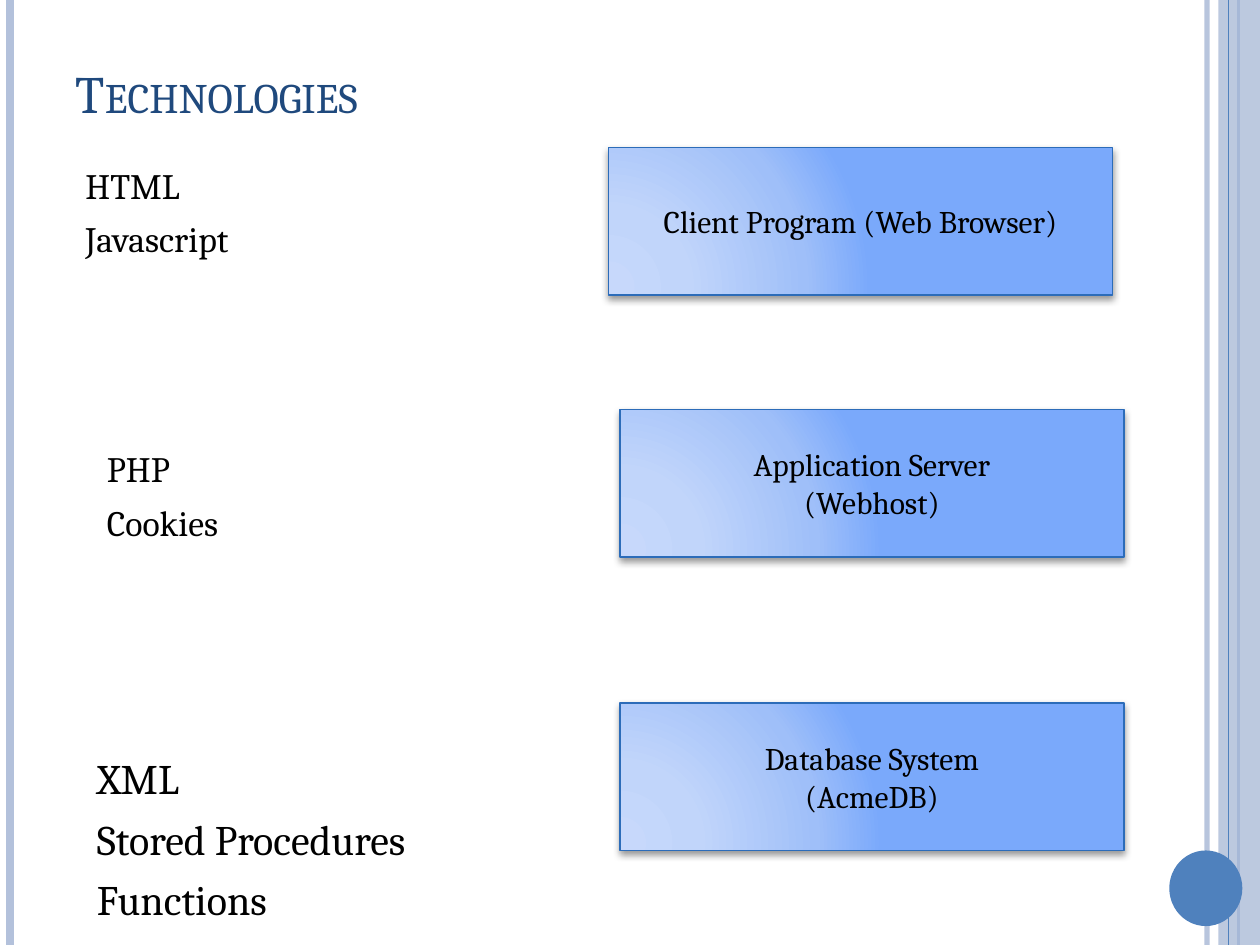
from lxml import etree
from pptx import Presentation
from pptx.dml.color import RGBColor
from pptx.enum.shapes import MSO_CONNECTOR, MSO_SHAPE
from pptx.enum.text import MSO_ANCHOR, PP_ALIGN
from pptx.oxml import parse_xml
from pptx.oxml.ns import nsdecls, qn
from pptx.util import Inches, Pt

STRAIGHT = MSO_CONNECTOR.STRAIGHT
RECTANGLE, OVAL = MSO_SHAPE.RECTANGLE, MSO_SHAPE.OVAL
MIDDLE, TOP = MSO_ANCHOR.MIDDLE, MSO_ANCHOR.TOP
LEFT, CENTER = PP_ALIGN.LEFT, PP_ALIGN.CENTER

FONT = "Cambria"
BLACK, NAVY, BLUE, PALE_BLUE = "000000", "1F497D", "4F81BD", "B3C1DB"
BOX_LINE = "2C6CB9"
GRADIENT_STOPS = [(0, "C7D8FB"), (30, "C1D5FA"), (75, "9FBFF9"), (100, "7AA9FB")]

TIERS = [
    ((4.83, 1.17, 4, 1.17), ["Client Program (Web Browser)"]),
    ((4.92, 3.25, 4, 1.17), ["Application Server", "(Webhost)"]),
    ((4.92, 5.58, 4, 1.17), ["Database System", "(AcmeDB)"]),
]
TECHNOLOGIES = [
    ((0.58, 1.25, 3.08, 0.75), 20.4, ["HTML", "Javascript"]),
    ((0.75, 3.5, 3.08, 0.75), 20.4, ["PHP", "Cookies"]),
    ((0.67, 5.92, 3.67, 1.42), 24, ["XML", "Stored Procedures", "Functions"]),
]


def color(value):
    return RGBColor.from_string(value)


def inches(box):
    return [Inches(length) for length in box]


def set_alpha(shape_properties, percent):
    rgb = next(shape_properties.iter(qn("a:srgbClr")))
    etree.SubElement(rgb, qn("a:alpha"), val=str(percent * 1000))


def write_lines(text_frame, lines, size, font_color=BLACK, align=LEFT, anchor=TOP, space=0):
    text_frame.word_wrap = True
    text_frame.vertical_anchor = anchor
    text_frame.text = "\n".join(lines)
    for paragraph in text_frame.paragraphs:
        paragraph.alignment = align
        paragraph.space_before = Pt(space)
        paragraph.font.name = FONT
        paragraph.font.size = Pt(size)
        paragraph.font.color.rgb = color(font_color)


def add_vertical_rule(slide, x, height, line_color, width):
    rule = slide.shapes.add_connector(STRAIGHT, *inches((x, 0, x, height)))
    rule.line.color.rgb = color(line_color)
    rule.line.width = Pt(width)
    etree.SubElement(rule._element.spPr, qn("a:effectLst"))
    return rule


def add_plain_shape(slide, kind, box, fill_color):
    shape = slide.shapes.add_shape(kind, *inches(box))
    shape.shadow.inherit = False
    shape.fill.solid()
    shape.fill.fore_color.rgb = color(fill_color)
    shape.line.fill.background()
    return shape


def add_frame(slide, width, height):
    inner_rule = add_vertical_rule(slide, width - 0.42, height, PALE_BLUE, 3)
    set_alpha(inner_rule._element.spPr, 93)
    add_vertical_rule(slide, 0.08, height, PALE_BLUE, 4.5)
    add_vertical_rule(slide, width - 0.17, height, BLUE, 1.5)
    band = add_plain_shape(slide, RECTANGLE, (width - 0.33, 0, 0.33, height), PALE_BLUE)
    set_alpha(band._element.spPr, 87)
    add_vertical_rule(slide, width - 0.25, height, BLUE, 0.75)
    add_plain_shape(slide, OVAL, (width - 0.72, height - 0.75, 0.58, 0.6), BLUE)


def set_title(slide, box, text):
    title = slide.shapes.title
    title.left, title.top, title.width, title.height = inches(box)
    write_lines(title.text_frame, [text], 30, NAVY, anchor=MIDDLE)
    title.text_frame.paragraphs[0].runs[0].font._element.set("cap", "small")


def set_radial_fill(shape):
    stops = "".join(
        f'<a:gs pos="{position * 1000}"><a:srgbClr val="{value}"/></a:gs>'
        for position, value in GRADIENT_STOPS
    )
    gradient = parse_xml(
        f'<a:gradFill {nsdecls("a")} rotWithShape="1"><a:gsLst>{stops}</a:gsLst>'
        '<a:path path="circle">'
        '<a:fillToRect l="5000" t="100000" r="120000" b="10000"/>'
        "</a:path></a:gradFill>"
    )
    shape.fill.background()
    properties = shape._element.spPr
    properties.replace(properties.find(qn("a:noFill")), gradient)


def set_soft_shadow(shape):
    shape.shadow.inherit = False
    effects = shape._element.spPr.find(qn("a:effectLst"))
    effects.append(parse_xml(
        f'<a:outerShdw {nsdecls("a")} blurRad="{Pt(4)}" dist="{Pt(2)}" dir="5400000" '
        'rotWithShape="0"><a:srgbClr val="000000"><a:alpha val="40000"/></a:srgbClr>'
        "</a:outerShdw>"
    ))


def add_tier(slide, box, lines):
    tier = slide.shapes.add_shape(RECTANGLE, *inches(box))
    set_radial_fill(tier)
    tier.line.color.rgb = color(BOX_LINE)
    tier.line.width = Pt(1)
    set_soft_shadow(tier)
    write_lines(tier.text_frame, lines, 18, align=CENTER, anchor=MIDDLE)


def add_technologies(slide, box, size, names):
    text_box = slide.shapes.add_textbox(*inches(box))
    write_lines(text_box.text_frame, names, size, space=6)


def main():
    presentation = Presentation()
    presentation.slide_width, presentation.slide_height = Inches(10), Inches(7.5)
    slide = presentation.slides.add_slide(presentation.slide_layouts[5])
    add_frame(slide, 10, 7.5)
    set_title(slide, (0.5, 0.3, 8.67, 0.87), "Technologies")
    for box, lines in TIERS:
        add_tier(slide, box, lines)
    for box, size, names in TECHNOLOGIES:
        add_technologies(slide, box, size, names)
    presentation.save("out.pptx")


if __name__ == "__main__":
    main()
